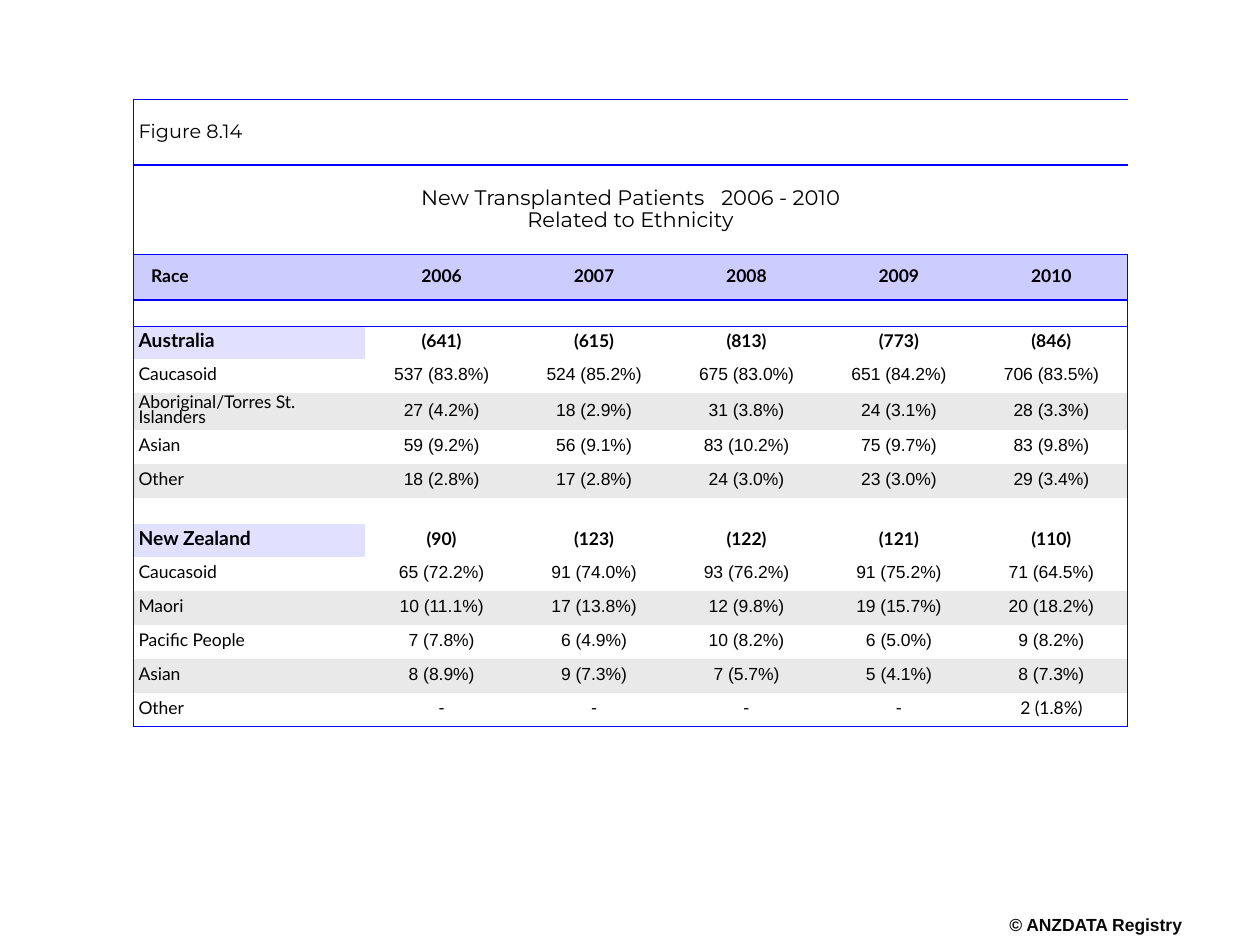
from lxml.etree import SubElement
from pptx import Presentation
from pptx.dml.color import RGBColor
from pptx.enum.text import MSO_ANCHOR, PP_ALIGN
from pptx.oxml.ns import qn
from pptx.util import Inches, Pt

COLORS = {"text": "000000", "credit": "080808", "border": "0000FF",
          "header": "CCCCFF", "country": "E1E1FF", "band": "E9E9E9"}
NO_STYLE = "{2D5ABB26-0587-4C30-8999-92F81FD0307C}"
COL_WIDTHS = [1.84] + [1.21] * 5
FIGURE_HEIGHT, TITLE_HEIGHT, HEADER_HEIGHT = 0.52, 0.71, 0.36
GAP_HEIGHT, COUNTRY_HEIGHT, RACE_HEIGHT = 0.21, 0.26, 0.27
HEADER = ["Race", "2006", "2007", "2008", "2009", "2010"]
COUNTRIES = [
    [
        ["Australia", "(641)", "(615)", "(813)", "(773)", "(846)"],
        ["Caucasoid", "537 (83.8%)", "524 (85.2%)", "675 (83.0%)", "651 (84.2%)", "706 (83.5%)"],
        ["Aboriginal/Torres St. Islanders", "27 (4.2%)", "18 (2.9%)", "31 (3.8%)", "24 (3.1%)", "28 (3.3%)"],
        ["Asian", "59 (9.2%)", "56 (9.1%)", "83 (10.2%)", "75 (9.7%)", "83 (9.8%)"],
        ["Other", "18 (2.8%)", "17 (2.8%)", "24 (3.0%)", "23 (3.0%)", "29 (3.4%)"],
    ],
    [
        ["New Zealand", "(90)", "(123)", "(122)", "(121)", "(110)"],
        ["Caucasoid", "65 (72.2%)", "91 (74.0%)", "93 (76.2%)", "91 (75.2%)", "71 (64.5%)"],
        ["Maori", "10 (11.1%)", "17 (13.8%)", "12 (9.8%)", "19 (15.7%)", "20 (18.2%)"],
        ["Pacific People", "7 (7.8%)", "6 (4.9%)", "10 (8.2%)", "6 (5.0%)", "9 (8.2%)"],
        ["Asian", "8 (8.9%)", "9 (7.3%)", "7 (5.7%)", "5 (4.1%)", "8 (7.3%)"],
        ["Other", "-", "-", "-", "-", "2 (1.8%)"],
    ],
]


def format_paragraph(p, size, font, bold=False, align=PP_ALIGN.LEFT, spacing=0.85, color="text"):
    """Set the alignment, line spacing and font of a paragraph."""
    p.alignment, p.line_spacing = align, spacing
    p.font.size, p.font.name, p.font.bold = Pt(size), font, bold
    p.font.color.rgb = RGBColor.from_string(COLORS[color])


def set_margins(cell, side, edge):
    """Set the inner margins of a cell and centre its text vertically."""
    cell.margin_left = cell.margin_right = Inches(side)
    cell.margin_top = cell.margin_bottom = Inches(edge)
    cell.vertical_anchor = MSO_ANCHOR.MIDDLE


def add_borders(cell, sides):
    """Draw the border on the named sides of a cell."""
    tc_pr = cell._tc.get_or_add_tcPr()
    for side in sides:
        ln = SubElement(tc_pr, qn(f"a:ln{side}"), w=str(Pt(1)))
        fill = SubElement(ln, qn("a:solidFill"))
        SubElement(fill, qn("a:srgbClr"), val=COLORS["border"])


def fill_cell(cell, color):
    """Fill a cell with a named colour."""
    cell.fill.solid()
    cell.fill.fore_color.rgb = RGBColor.from_string(COLORS[color])


def add_caption_rows(table):
    """Write the figure number and the title across the full table width."""
    figure, title = table.cell(0, 0), table.cell(1, 0)
    for row, cell in enumerate((figure, title)):
        cell.merge(table.cell(row, len(COL_WIDTHS) - 1))
    set_margins(figure, 0.04, 0.08)
    set_margins(title, 0.04, 0.04)
    figure.text = "Figure 8.14"
    format_paragraph(figure.text_frame.paragraphs[0], 11, "Montserrat")
    p = title.text_frame.paragraphs[0]
    runs = [p.add_run() for _ in range(3)]
    for r, text in zip(runs, ("New Transplanted Patients", " ", "2006 - 2010")):
        r.text = text
    runs[1].font._element.set("spc", "630")
    title.text_frame.add_paragraph().text = "Related to Ethnicity"
    for p in title.text_frame.paragraphs:
        format_paragraph(p, 12, "Montserrat", align=PP_ALIGN.CENTER)


def add_header_row(table, row):
    """Write the column headings."""
    for col, text in enumerate(HEADER):
        cell = table.cell(row, col)
        set_margins(cell, 0.04, 0.04)
        cell.text = text
        align = PP_ALIGN.CENTER if col else PP_ALIGN.LEFT
        format_paragraph(cell.text_frame.paragraphs[0], 10, "Lato", True, align)
        fill_cell(cell, "header")
    table.cell(row, 0).margin_left = Inches(0.14)


def add_gap_row(table, row):
    """Keep an empty row low."""
    for col in range(len(COL_WIDTHS)):
        cell = table.cell(row, col)
        set_margins(cell, 0.04, 0.02)
        SubElement(cell.text_frame.paragraphs[0]._p, qn("a:endParaRPr"), sz="800")


def add_country(table, top, rows):
    """Write one country row and the race rows below it."""
    for i, values in enumerate(rows):
        for col, text in enumerate(values):
            cell = table.cell(top + i, col)
            set_margins(cell, 0.04, 0.02)
            cell.text = text
            is_country, is_label = i == 0, col == 0
            is_arial = not (is_country or is_label or "-" in values)
            format_paragraph(cell.text_frame.paragraphs[0],
                             11 if is_country and is_label else 10,
                             "Arial" if is_arial else "Lato", is_country,
                             PP_ALIGN.LEFT if is_label else PP_ALIGN.CENTER,
                             0.85 if is_arial else 0.75)
            if is_country and is_label:
                fill_cell(cell, "country")
            elif i and i % 2 == 0:
                fill_cell(cell, "band")


def add_ethnicity_table(s, left, top):
    """Build the framed table of patients by country and race."""
    heights = [FIGURE_HEIGHT, TITLE_HEIGHT, HEADER_HEIGHT]
    for rows in COUNTRIES:
        heights += [GAP_HEIGHT, COUNTRY_HEIGHT] + [RACE_HEIGHT] * (len(rows) - 1)
    last_row, last_col = len(heights) - 1, len(COL_WIDTHS) - 1
    table = s.shapes.add_table(len(heights), len(COL_WIDTHS), Inches(left), Inches(top),
                               Inches(sum(COL_WIDTHS)), Inches(sum(heights))).table
    table.first_row = table.horz_banding = False
    table._tbl.tblPr.find(qn("a:tableStyleId")).text = NO_STYLE
    for column, width in zip(table.columns, COL_WIDTHS):
        column.width = Inches(width)
    for row, height in enumerate(heights):
        table.rows[row].height = Inches(height)
        for col in range(len(COL_WIDTHS)):
            sides = {"L": col == 0, "R": col == last_col,
                     "T": row <= 3, "B": row <= 2 or row == last_row}
            add_borders(table.cell(row, col), [side for side in sides if sides[side]])
    add_caption_rows(table)
    add_header_row(table, 2)
    row = 3
    for rows in COUNTRIES:
        add_gap_row(table, row)
        add_country(table, row + 1, rows)
        row += len(rows) + 1


def add_credit(s, left, top, width, height):
    """Write the copyright line."""
    tf = s.shapes.add_textbox(Inches(left), Inches(top), Inches(width), Inches(height)).text_frame
    tf.margin_left = tf.margin_right = tf.margin_top = tf.margin_bottom = 0
    tf.word_wrap = False
    tf.text = "© ANZDATA Registry"
    format_paragraph(tf.paragraphs[0], 10, "Arial", True, PP_ALIGN.CENTER, color="credit")


def main():
    """Build and save the slide."""
    prs = Presentation()
    prs.slide_width, prs.slide_height = Inches(10), Inches(7.5)
    s = prs.slides.add_slide(prs.slide_layouts[6])
    add_credit(s, 7.99, 7.28, 1.41, 0.17)
    add_ethnicity_table(s, 1.06, 0.79)
    prs.save("out.pptx")


if __name__ == "__main__":
    main()
